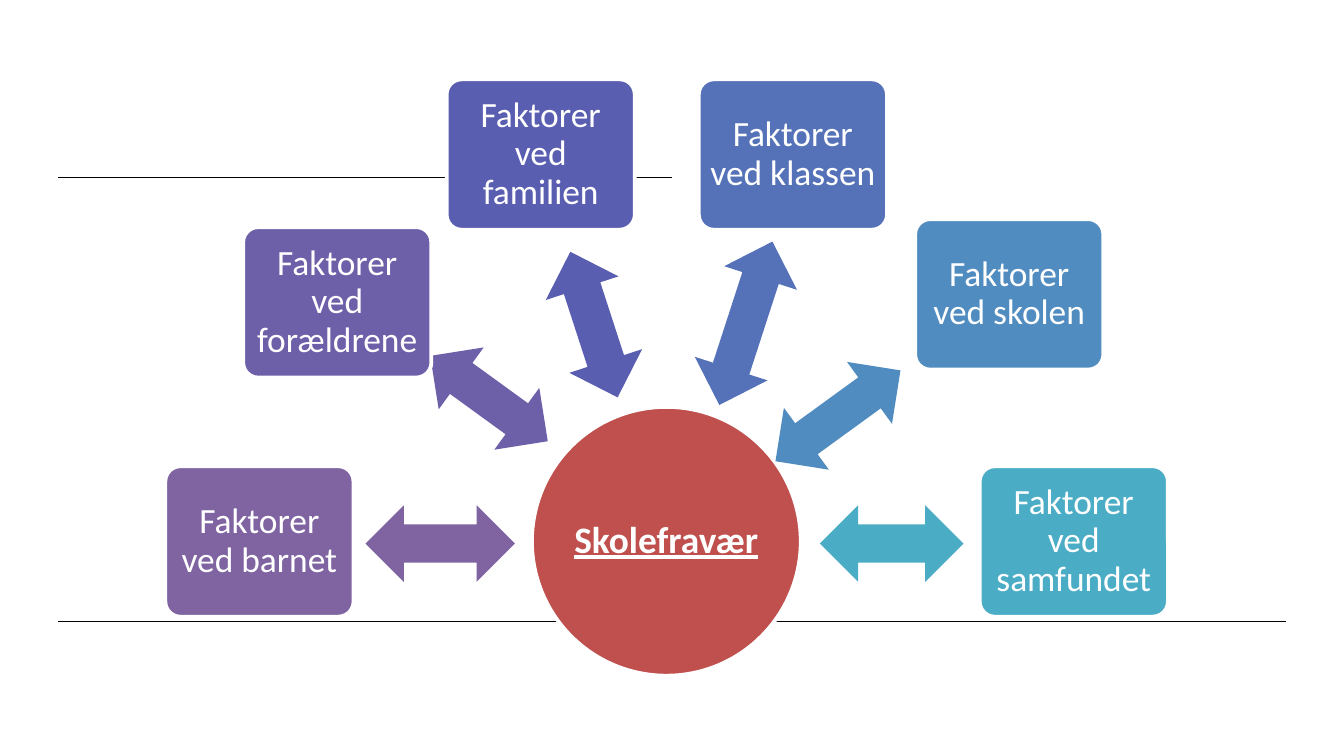
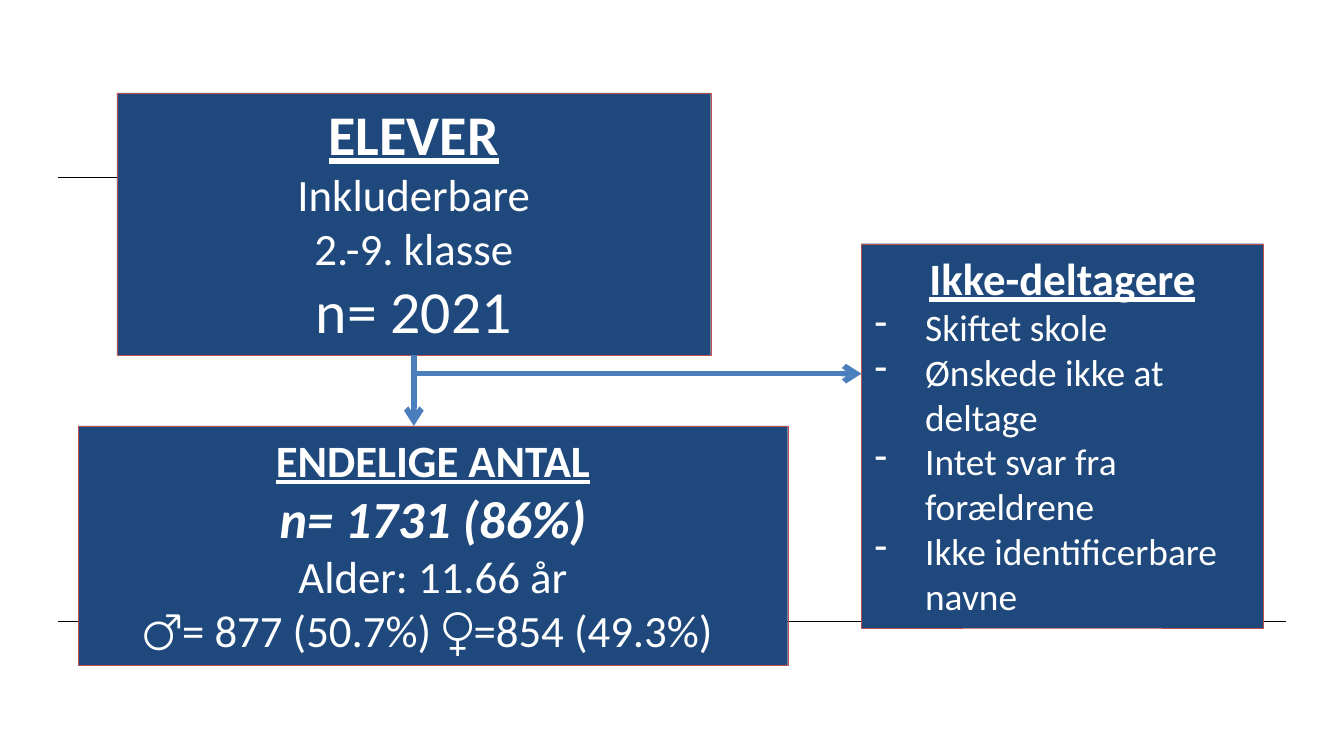
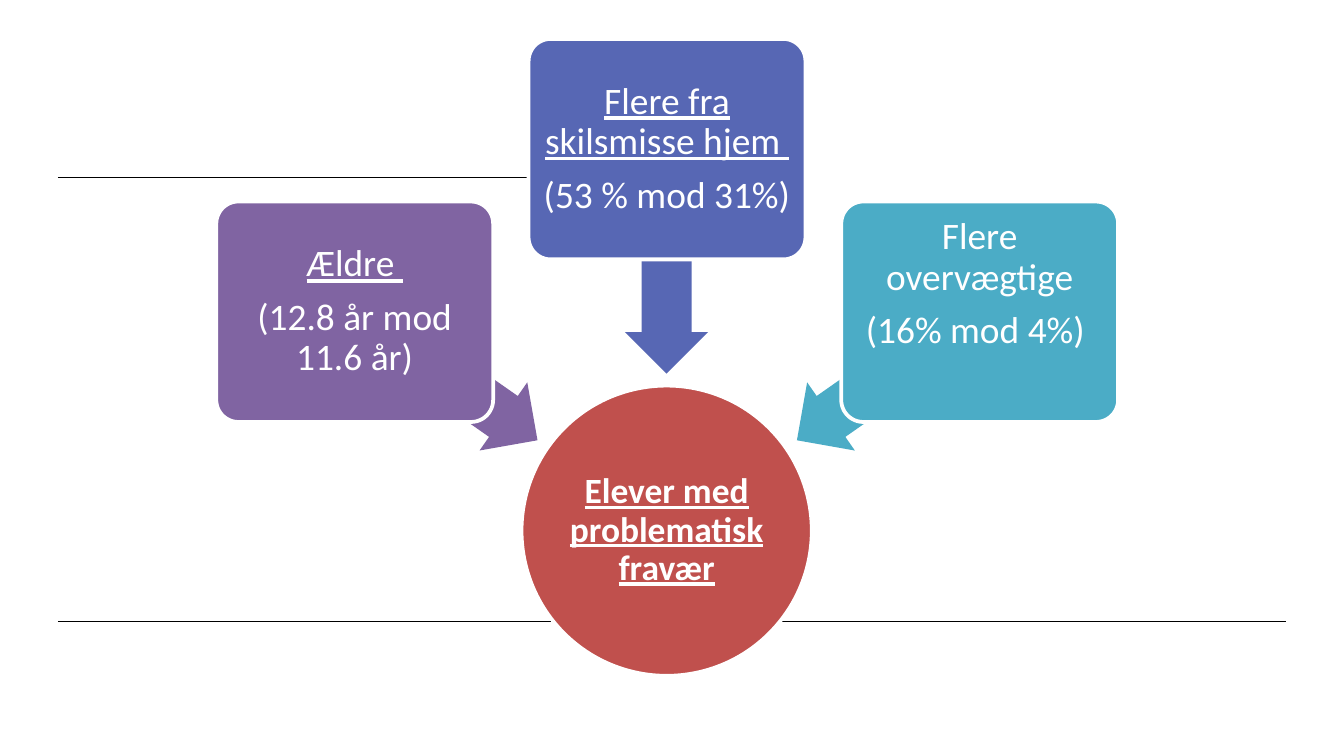
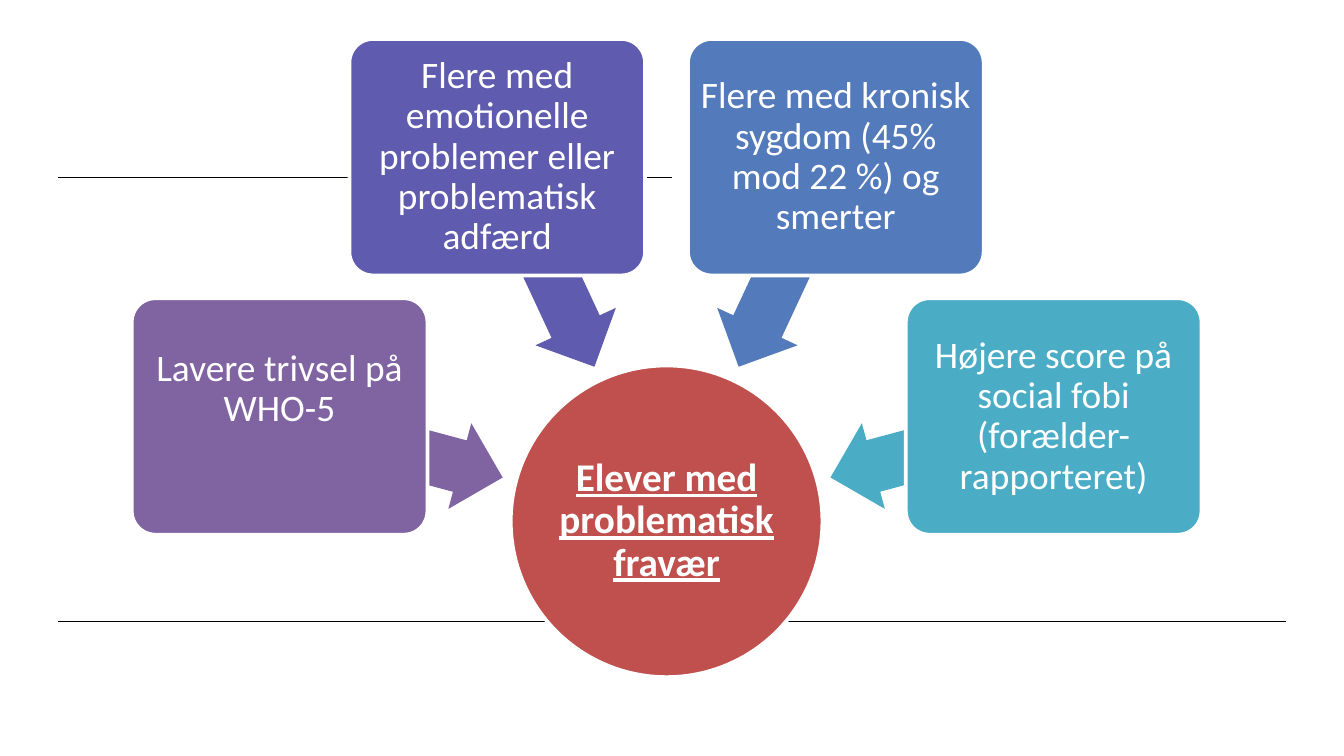
from lxml import etree
from pptx import Presentation
from pptx.dml.color import RGBColor
from pptx.enum.shapes import MSO_CONNECTOR, MSO_SHAPE
from pptx.enum.text import MSO_ANCHOR, MSO_AUTO_SIZE, PP_ALIGN
from pptx.oxml.ns import qn
from pptx.util import Pt

RECT, ROUND, OVAL = MSO_SHAPE.RECTANGLE, MSO_SHAPE.ROUNDED_RECTANGLE, MSO_SHAPE.OVAL
LEFT_ARROW, TWO_WAY = MSO_SHAPE.LEFT_ARROW, MSO_SHAPE.LEFT_RIGHT_ARROW
STRAIGHT = MSO_CONNECTOR.STRAIGHT
MIDDLE, TOP = MSO_ANCHOR.MIDDLE, MSO_ANCHOR.TOP
LEFT, CENTER = PP_ALIGN.LEFT, PP_ALIGN.CENTER
GROW = MSO_AUTO_SIZE.SHAPE_TO_FIT_TEXT
BOTTOM_SIDE = 2


class Theme:
    font = "Calibri"
    white = "FFFFFF"
    rule = "000000"
    red = "C0504D"
    navy = "1F497D"
    flow = "4B7EBC"
    purple = "8064A2"
    teal = "4BACC6"
    small, body, label, head, strong, title, count = 19, 20, 21, 24, 28, 30, 32
    gap = 7      # between paragraphs in a diagram box
    lift = 29    # raises the text of a box by one empty line


def draw(slide, kind, x, y, w, h, fill, edge=None, width=2.0):
    """Add a flat filled shape, outlined only if an edge colour is given."""
    shape = slide.shapes.add_shape(kind, Pt(x), Pt(y), Pt(w), Pt(h))
    shape.shadow.inherit = False
    shape.fill.solid()
    shape.fill.fore_color.rgb = RGBColor.from_string(fill)
    if edge:
        shape.line.color.rgb = RGBColor.from_string(edge)
        shape.line.width = Pt(width)
    else:
        shape.line.fill.background()
    return shape


def write(shape, text, size, bold=False, italic=False, under=False, dash=False,
          space=None, gap=0, anchor=TOP, inset=(7.2, 3.6, 3.6)):
    """Add a paragraph; inset holds the side, top and bottom margins."""
    frame = shape.text_frame
    frame.word_wrap = True
    frame.vertical_anchor = anchor
    side, top, base = inset
    frame.margin_left = frame.margin_right = Pt(side)
    frame.margin_top, frame.margin_bottom = Pt(top), Pt(base)
    first = not frame.text
    para = frame.paragraphs[0] if first else frame.add_paragraph()
    para.alignment = LEFT if dash else CENTER
    if space:
        para.line_spacing = space
    if not first:
        para.space_before = Pt(gap)
    if dash:
        props = para._p.get_or_add_pPr()
        props.set("marL", str(Pt(27)))
        props.set("indent", str(-Pt(27)))
        etree.SubElement(props, qn("a:buChar")).set("char", "-")
    run = para.add_run()
    run.text = text
    font = run.font
    font.name, font.size = Theme.font, Pt(size)
    font.bold, font.italic, font.underline = bold, italic, under
    font.color.rgb = RGBColor.from_string(Theme.white)


deck = Presentation()
deck.slide_width, deck.slide_height = Pt(720), Pt(405)
blank = deck.slide_layouts[6]

# Every slide has the same two thin rules.
lines = []
slides = [deck.slides.add_slide(blank) for _ in range(4)]
for slide in slides:
    for right, y in [(689, 332.8), (360, 95)]:
        rule = slide.shapes.add_connector(STRAIGHT, Pt(31), Pt(y), Pt(right), Pt(y))
        rule.line.color.rgb = RGBColor.from_string(Theme.rule)
        rule.line.width = Pt(0.25)
        lines.append(rule)

# Hub diagrams: each factor has a colour, the arrow's centre and length,
# the box's corner, its paragraphs as (text, underlined), and a lift.
hubs = [
    dict(slide=slides[0], hub="Skolefravær", hub_size=Theme.body, circle=(285, 218, 144),
         box=(100.8, 80.6), size=Theme.small, arrow=TWO_WAY, thick=41, turn=(180, 36),
         factors=[
             (Theme.purple, (235.8, 291.2, 80), (88.6, 249.8), [("Faktorer ved barnet", False)], 0),
             ("6E5FA9", (262, 213.5, 77.8), (130.3, 121.7), [("Faktorer ved forældrene", False)], 0),
             ("5A5EB1", (318.2, 173.9, 82), (239.3, 42.5), [("Faktorer ved familien", False)], 0),
             ("5572B8", (399.6, 173.2, 92), (374.4, 42.5), [("Faktorer ved klassen", False)], 0),
             ("508CBF", (448.9, 222.8, 82.8), (490.3, 117.4), [("Faktorer ved skolen", False)], 0),
             (Theme.teal, (477.7, 291.2, 77), (524.9, 249.8), [("Faktorer ved samfundet", False)], 0),
         ]),
    dict(slide=slides[2], hub="Elever med problematisk fravær", hub_size=Theme.small,
         circle=(279.4, 206.6, 155.5), box=(148.3, 118.1), size=Theme.body,
         arrow=LEFT_ARROW, thick=44.6, turn=(215, 55),
         factors=[
             (Theme.purple, (239, 201.6, 119.5), (115.9, 108),
              [("Ældre ", True), ("(12.8 år mod 11.6 år)", False)], 0),
             ("5767B4", (357.1, 140.4, 119.5), (283.2, 20.9),
              [("Flere fra skilsmisse hjem ", True), ("(53 % mod 31%)", False)], 0),
             (Theme.teal, (475.9, 201.6, 119.5), (450.7, 108),
              [("Flere overvægtige", False), ("(16% mod 4%) ", False)], Theme.lift),
         ]),
    dict(slide=slides[3], hub="Elever med problematisk fravær", hub_size=Theme.label,
         circle=(273.6, 195.8, 167), box=(158.4, 126.7), size=Theme.body,
         arrow=LEFT_ARROW, thick=47.5, turn=(195, 50),
         factors=[
             (Theme.purple, (209.5, 239.8, 123.8), (70.6, 159.8),
              [("Lavere trivsel på WHO-5", False)], Theme.lift),
             ("5F5BAE", (292.3, 140.4, 123.8), (187.2, 20.9),
              [("Flere med emotionelle problemer eller problematisk adfærd", False)], 0),
             ("537ABA", (421.9, 140.4, 123.8), (368.6, 20.9),
              [("Flere med kronisk sygdom (45% mod 22 %) og smerter", False)], 0),
             (Theme.teal, (504.7, 239.8, 123.8), (485.3, 159.8),
              [("Højere score på social fobi (forælder-rapporteret)", False)], 0),
         ]),
]
for plan in hubs:
    slide = plan["slide"]
    x, y, wide = plan["circle"]
    hub = draw(slide, OVAL, x, y, wide, wide, Theme.red, Theme.white)
    write(hub, plan["hub"], plan["hub_size"], bold=True, under=True,
          space=0.9, anchor=MIDDLE, inset=(0.9, 0.9, 0.9))
    start, step = plan["turn"]
    thick = plan["thick"]
    for i, (color, (mid_x, mid_y, span), corner, texts, lift) in enumerate(plan["factors"]):
        arrow = draw(slide, plan["arrow"], mid_x - span / 2, mid_y - thick / 2, span, thick, color)
        arrow.rotation = (start + step * i) % 360
        if plan["arrow"] == LEFT_ARROW:
            arrow.adjustments[0] = 0.6
        box = draw(slide, ROUND, *corner, *plan["box"], color, Theme.white)
        box.adjustments[0] = 0.1
        for text, under in texts:
            write(box, text, plan["size"], under=under, space=0.9, gap=Theme.gap,
                  anchor=MIDDLE, inset=(2.7, 2.7, 2.7 + lift))

# Flow of pupils through the study
flow = slides[1]
heading = dict(bold=True, under=True)
cards = [
    ((62.6, 49.7, 318.2, 140.4), [
        ("ELEVER", Theme.title, heading),
        ("Inkluderbare", Theme.head, {}),
        ("2.-9. klasse", Theme.head, {}),
        ("n= 2021", Theme.count, {})]),
    ((41.8, 228.2, 380.2, 128.2), [
        ("ENDELIGE ANTAL", Theme.head, heading),
        ("n= 1731 (86%)", Theme.strong, dict(bold=True, italic=True)),
        ("Alder: 11.66 år", Theme.head, {}),
        ("♂= 877 (50.7%) ♀=854 (49.3%) ", Theme.head, {})]),
    ((461.5, 130.6, 215.3, 205.9), [
        ("Ikke-deltagere", Theme.head, heading),
        ("Skiftet skole", Theme.body, dict(dash=True)),
        ("Ønskede ikke at deltage", Theme.body, dict(dash=True)),
        ("Intet svar fra forældrene", Theme.body, dict(dash=True)),
        ("Ikke identificerbare navne", Theme.body, dict(dash=True))]),
]
boxes = []
for place, texts in cards:
    box = draw(flow, RECT, *place, Theme.navy, Theme.red, 0.14)
    for text, size, form in texts:
        write(box, text, size, **form)
    box.text_frame.auto_size = GROW
    boxes.append(box)

for x1, y1, x2, y2 in [(221.7, 190.1, 221.7, 228.2), (221.7, 200.2, 461.5, 200.2)]:
    arrow = flow.shapes.add_connector(STRAIGHT, Pt(x1), Pt(y1), Pt(x2), Pt(y2))
    arrow.line.color.rgb = RGBColor.from_string(Theme.flow)
    arrow.line.width = Pt(3)
    etree.SubElement(arrow.line._get_or_add_ln(), qn("a:tailEnd")).set("type", "arrow")
    if x1 == x2:
        arrow.begin_connect(boxes[0], BOTTOM_SIDE)
    lines.append(arrow)

# Lines cast no shadow.
for line in lines:
    etree.SubElement(line._element.spPr, qn("a:effectLst"))

deck.save("out.pptx")
